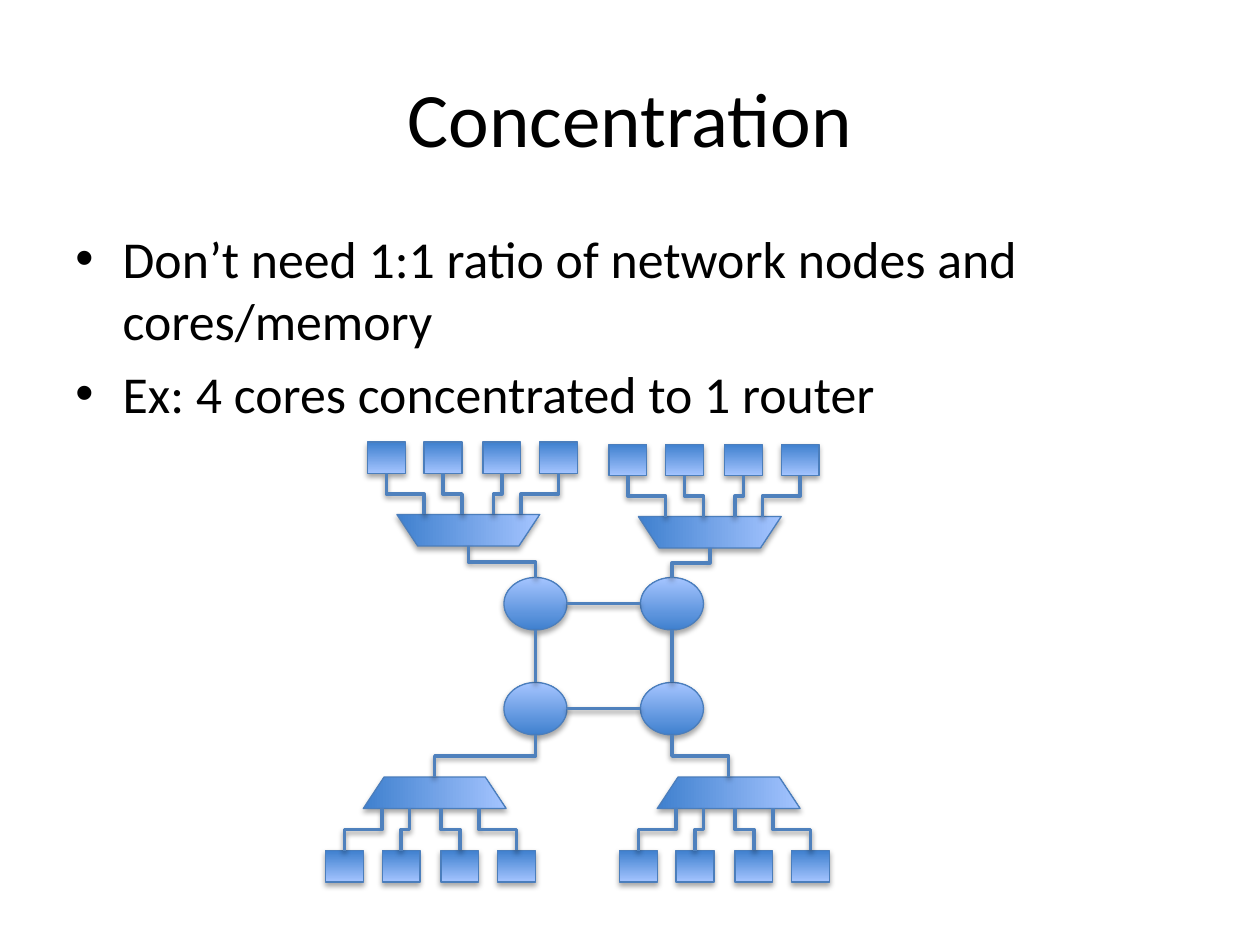
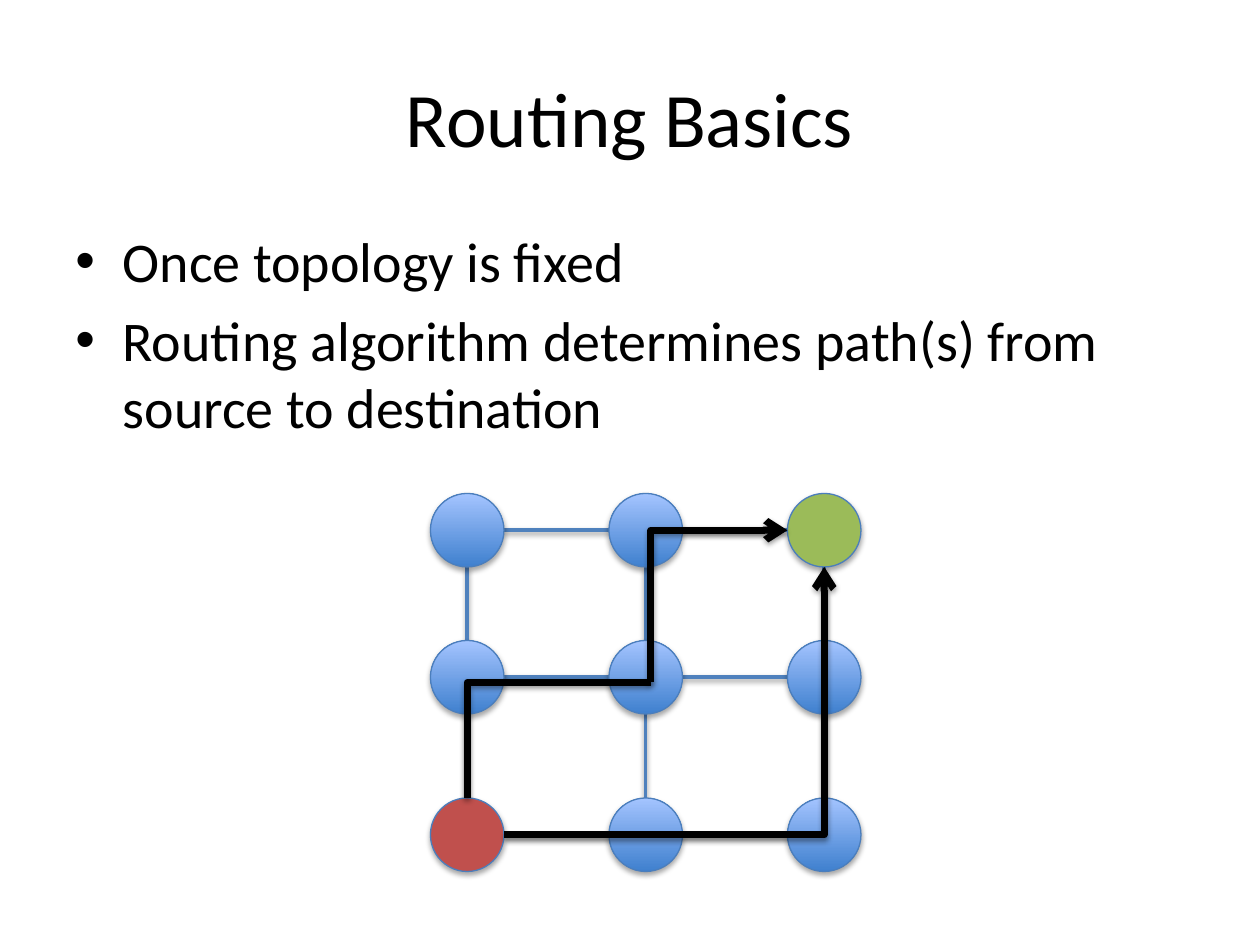
"""Build two slides on network concentration and routing basics."""
import itertools

import pptx
import pptx.dml.color
import pptx.enum.shapes
import pptx.enum.text
import pptx.oxml
import pptx.oxml.ns
import pptx.util

PX = 7620
FONT = "Calibri"
BLACK, BLUE, EDGE = "000000", "4F81BD", "4B7EBC"
DARK, LIGHT, RED, GREEN = "3F80CE", "A4C4FF", "C0504D", "9BBB59"
NS = pptx.oxml.ns.nsdecls("a")
SHADOW = (f'<a:effectLst {NS}><a:outerShdw blurRad="39370" dist="%d" dir="5400000" rotWithShape="0">'
          '<a:srgbClr val="000000"><a:alpha val="%d"/></a:srgbClr></a:outerShdw></a:effectLst>')

rgb = pptx.dml.color.RGBColor.from_string
xml = pptx.oxml.parse_xml
qn = pptx.oxml.ns.qn
MSO = pptx.enum.shapes.MSO_SHAPE
LINE = pptx.enum.shapes.MSO_CONNECTOR.STRAIGHT
ELBOW = pptx.enum.shapes.MSO_CONNECTOR.ELBOW


def text(s, lines, box, size, align="LEFT", anchor="TOP", bullet=False):
    tf = s.shapes.add_textbox(*[v * PX for v in box]).text_frame
    tf.word_wrap = True
    tf.vertical_anchor = getattr(pptx.enum.text.MSO_ANCHOR, anchor)
    for i, line in enumerate(lines):
        p = tf.paragraphs[0] if i == 0 else tf.add_paragraph()
        p.alignment = getattr(pptx.enum.text.PP_ALIGN, align)
        r = p.add_run()
        r.text = line
        r.font.name, r.font.size = FONT, pptx.util.Pt(size)
        r.font.color.rgb = rgb(BLACK)
        if bullet:
            p.space_before = pptx.util.Pt(round(size * 0.2, 1))
            pPr = p._p.get_or_add_pPr()
            pPr.set("marL", str(45 * PX))
            pPr.set("indent", str(-45 * PX))
            pPr.append(xml(f'<a:buFont {NS} typeface="Arial"/>'))
            pPr.append(xml(f'<a:buChar {NS} char="•"/>'))


def link(s, x1, y1, x2, y2, preset="line", upright=False, color=BLUE, width=2, arrow=False):
    if upright:
        mx, my, down = (x1 + x2) / 2, (y1 + y2) / 2, y2 > y1
        half_w, half_h = abs(y2 - y1) / 2, (x2 - x1) / 2 * (1 if down else -1)
        x1, y1, x2, y2 = mx - half_w, my + half_h, mx + half_w, my - half_h
    c = s.shapes.add_connector(LINE if preset == "line" else ELBOW,
                               *[int(v * PX) for v in (x1, y1, x2, y2)])
    spPr = c._element.spPr
    spPr.find(qn("a:prstGeom")).set("prst", preset)
    if upright:
        spPr.find(qn("a:xfrm")).set("rot", "5400000" if down else "16200000")
    c.line.color.rgb, c.line.width = rgb(color), pptx.util.Pt(width)
    if arrow:
        spPr.find(qn("a:ln")).append(xml(f'<a:tailEnd {NS} type="arrow"/>'))
    spPr.append(xml(SHADOW % (20320, 38000)))


ROUTER_X, ROUTER_Y = (510, 640), (575, 675)
CORE_X, PORT_X = (0, 54, 110, 164), (36, 72, 102, 128)
routers = [(MSO.OVAL, x - 30, y - 25, 60, 50, 90, False)
           for y, x in itertools.product(ROUTER_Y, ROUTER_X)]
cores, wires = [], []
for left, top, router, below in ((368, 421, 510, False), (598, 423, 640, False),
                                 (328, 740, 510, True), (608, 740, 640, True)):
    core_y, mux_y = (top + 70, top) if below else (top, top + 69)
    mux_x = left + (18 if below else 10)
    ports = [164 - x for x in reversed(PORT_X)] if below else PORT_X
    cores += [(MSO.RECTANGLE, left + x - 18, core_y, 36, 30, 270, False) for x in CORE_X]
    cores.append((MSO.TRAPEZOID, mux_x, mux_y, 136, 30, 0, not below))
    core_edge, mux_edge = (core_y, mux_y + 30) if below else (core_y + 30, mux_y)
    wires += [(left + a, core_edge, left + b, mux_edge) for a, b in zip(CORE_X, ports)]
    wires.append((mux_x + 68, mux_y, router, 700) if below
                 else (mux_x + 68, mux_y + 30, router, 550))
wires = [(w, dict(preset="bentConnector3", upright=True)) for w in wires]
wires += [((540, y, 610, y), {}) for y in ROUTER_Y]
wires += [((x, 600, x, 650), {}) for x in ROUTER_X]

MESH_X, MESH_Y = (445, 615, 785), (505, 645, 795)
mesh_fill = {(445, 795): RED, (785, 505): GREEN}
mesh = [(MSO.OVAL, x - 35, y - 35, 70, 70, mesh_fill.get((x, y), 90), False)
        for y, x in itertools.product(MESH_Y, MESH_X)]
mesh_links = [((a + 35, y, b - 35, y), {}) for y in MESH_Y for a, b in zip(MESH_X, MESH_X[1:])]
mesh_links += [((x, a + 35, x, b - 35), {}) for x in MESH_X for a, b in zip(MESH_Y, MESH_Y[1:])]
route = dict(preset="bentConnector2", color=BLACK, width=4)
routes = [((480, 795, 785, 540), dict(route, arrow=True)),
          ((445, 760, 620, 650), dict(route, upright=True)),
          ((620, 650, 750, 505), dict(route, upright=True, arrow=True))]

slides = [
    ("Concentration", ["Don’t need 1:1 ratio of network nodes and cores/memory",
                       "Ex: 4 cores concentrated to 1 router"],
     190, 29.6, [], routers + cores, wires),
    ("Routing Basics", ["Once topology is fixed",
                        "Routing algorithm determines path(s) from source to destination"],
     290, 32, mesh_links, mesh, routes),
]

prs = pptx.Presentation()
prs.slide_width, prs.slide_height = 1200 * PX, 900 * PX
for title, bullets, height, size, under, nodes, over in slides:
    s = prs.slides.add_slide(prs.slide_layouts[6])
    for ends, style in under:
        link(s, *ends, **style)
    text(s, [title], (60, 36, 1080, 150), 44, align="CENTER", anchor="MIDDLE")
    text(s, bullets, (60, 210, 1080, height), size, bullet=True)
    for preset, x, y, w, h, fill, flip in nodes:
        sp = s.shapes.add_shape(preset, x * PX, y * PX, w * PX, h * PX)
        if preset == MSO.TRAPEZOID:
            sp.adjustments[0] = 0.66
        if flip:
            sp._element.spPr.find(qn("a:xfrm")).set("flipV", "1")
        if isinstance(fill, str):
            sp.fill.solid()
            sp.fill.fore_color.rgb = rgb(fill)
        else:
            sp.fill.gradient()
            sp.fill.gradient_angle = fill
            for stop, (color, at) in zip(sp.fill.gradient_stops, ((DARK, 0), (LIGHT, 1))):
                stop.color.rgb, stop.position = rgb(color), at
        sp.line.color.rgb, sp.line.width = rgb(EDGE), pptx.util.Pt(0.75)
        sp._element.spPr.append(xml(SHADOW % (22860, 35000)))
    for ends, style in over:
        link(s, *ends, **style)

prs.save("out.pptx")
